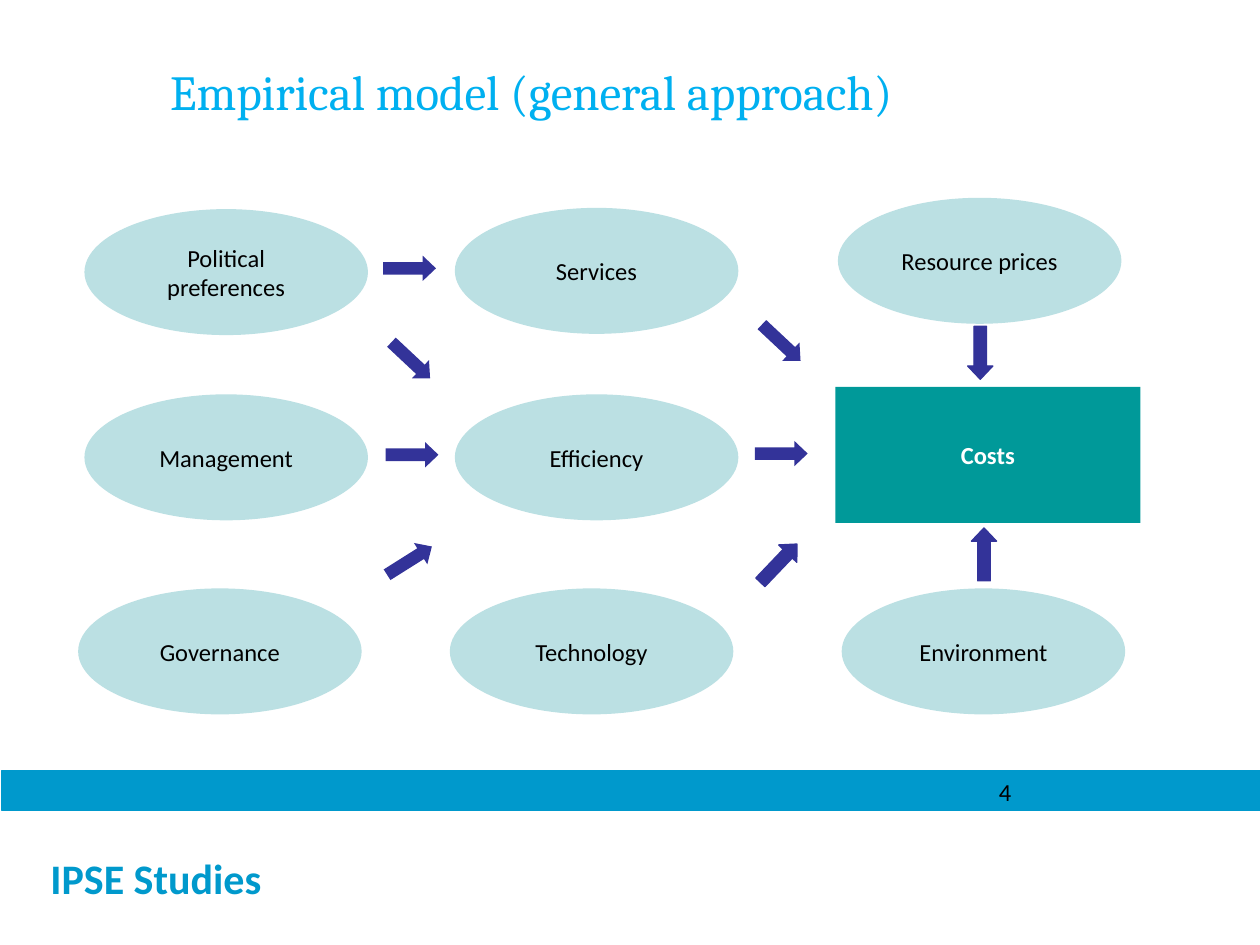
import pptx
import pptx.dml.color
import pptx.enum.shapes
import pptx.enum.text
import pptx.util
from pptx.util import Inches

SHAPES = pptx.enum.shapes.MSO_SHAPE
ALIGN = pptx.enum.text.PP_ALIGN
ANCHOR = pptx.enum.text.MSO_ANCHOR
BLUE = "0099CC"
ARROW_COLOR = "333399"

FACTORS = [
    ("Political preferences", 0.67, 1.66),
    ("Management", 0.67, 3.13),
    ("Governance", 0.62, 4.67),
    ("Services", 3.61, 1.65),
    ("Efficiency", 3.61, 3.13),
    ("Technology", 3.57, 4.67),
    ("Resource prices", 6.65, 1.57),
    ("Environment", 6.68, 4.67),
]

# left, top, clockwise angle from pointing right, outlined
ARROWS = [
    (3.04, 2.03, 0, False),
    (3.05, 2.76, 43.1, False),
    (3.06, 3.51, 0, False),
    (3.04, 4.35, -32.2, False),
    (5.99, 2.62, 43.1, False),
    (5.99, 3.5, 0, False),
    (5.97, 4.37, -46.3, True),
    (7.57, 2.7, 90, True),
    (7.6, 4.3, -90, True),
]


def rgb(color):
    return pptx.dml.color.RGBColor.from_string(color)


def add_shape(page, kind, left, top, width, height, fill, line=None):
    shape = page.shapes.add_shape(
        kind, Inches(left), Inches(top), Inches(width), Inches(height))
    shape.shadow.inherit = False
    shape.fill.solid()
    shape.fill.fore_color.rgb = rgb(fill)
    if line:
        shape.line.color.rgb = rgb(line)
        shape.line.width = pptx.util.Pt(0.75)
    else:
        shape.line.fill.background()
    return shape


def write(shape, text, size, color="000000", font="Calibri", bold=False,
          align=ALIGN.CENTER, anchor=ANCHOR.MIDDLE):
    frame = shape.text_frame
    frame.text = text
    frame.word_wrap = True
    frame.vertical_anchor = anchor
    para = frame.paragraphs[0]
    para.alignment = align
    span = para.runs[0]
    span.font.name = font
    span.font.size = pptx.util.Pt(size)
    span.font.bold = bold
    span.font.color.rgb = rgb(color)


def add_text(page, text, left, top, width, height, size, **style):
    box = page.shapes.add_textbox(
        Inches(left), Inches(top), Inches(width), Inches(height))
    write(box, text, size, align=ALIGN.LEFT, anchor=ANCHOR.TOP, **style)
    return box


def add_footer(page):
    footer = add_shape(page, SHAPES.RECTANGLE, -0.01, 6.44, 10.01, 1.06, "FFFFFF")
    write(footer, "IPSE Studies", 24, BLUE, bold=True, align=ALIGN.LEFT)
    footer.text_frame.margin_left = Inches(0.41)
    add_shape(page, SHAPES.RECTANGLE, 0.01, 6.12, 10, 0.31, BLUE, BLUE)
    add_text(page, "4", 7.83, 6.12, 2.08, 0.25, 14)


def add_title(page):
    title = add_text(page, "Empirical model (general approach)",
                     0.75, 0.44, 8.11, 0.57, 28, color="00B0F0", font="Cambria")
    title.text_frame.margin_left = Inches(0.6)
    title.text_frame.paragraphs[0].space_after = pptx.util.Pt(18)


def add_factor(page, text, left, top):
    factor = add_shape(page, SHAPES.OVAL, left, top, 2.25, 1, "BBE0E3")
    write(factor, text, 14)


def add_arrow(page, left, top, angle, outlined):
    arrow = add_shape(page, SHAPES.RIGHT_ARROW, left, top, 0.42, 0.2,
                      ARROW_COLOR, ARROW_COLOR if outlined else None)
    arrow.adjustments[1] = 0.526
    arrow.rotation = angle


def main():
    deck = pptx.Presentation()
    deck.slide_width = Inches(10)
    deck.slide_height = Inches(7.5)
    page = deck.slides.add_slide(deck.slide_layouts[6])
    add_footer(page)
    add_title(page)
    for factor in FACTORS:
        add_factor(page, *factor)
    costs = add_shape(page, SHAPES.RECTANGLE, 6.63, 3.07, 2.42, 1.08, "009999")
    write(costs, "Costs", 14, "FFFFFF", bold=True)
    for arrow in ARROWS:
        add_arrow(page, *arrow)
    deck.save("out.pptx")


if __name__ == "__main__":
    main()
